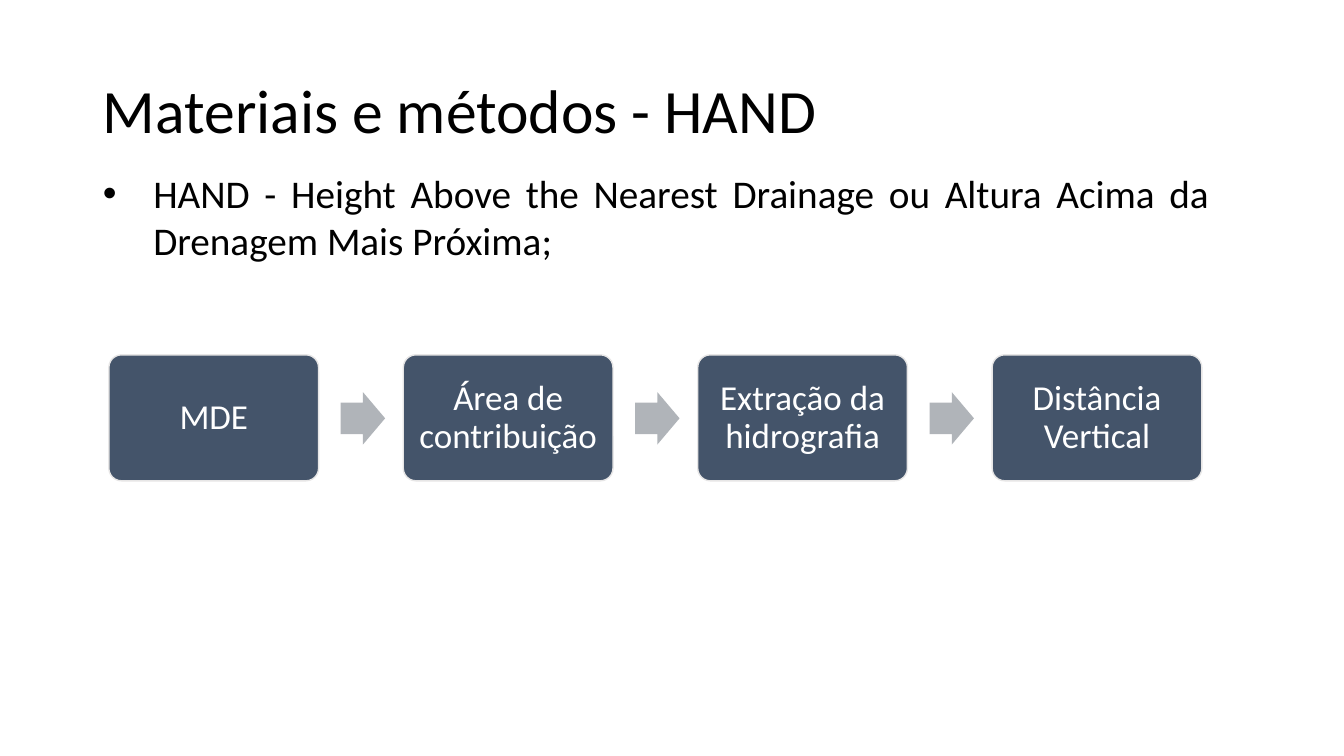
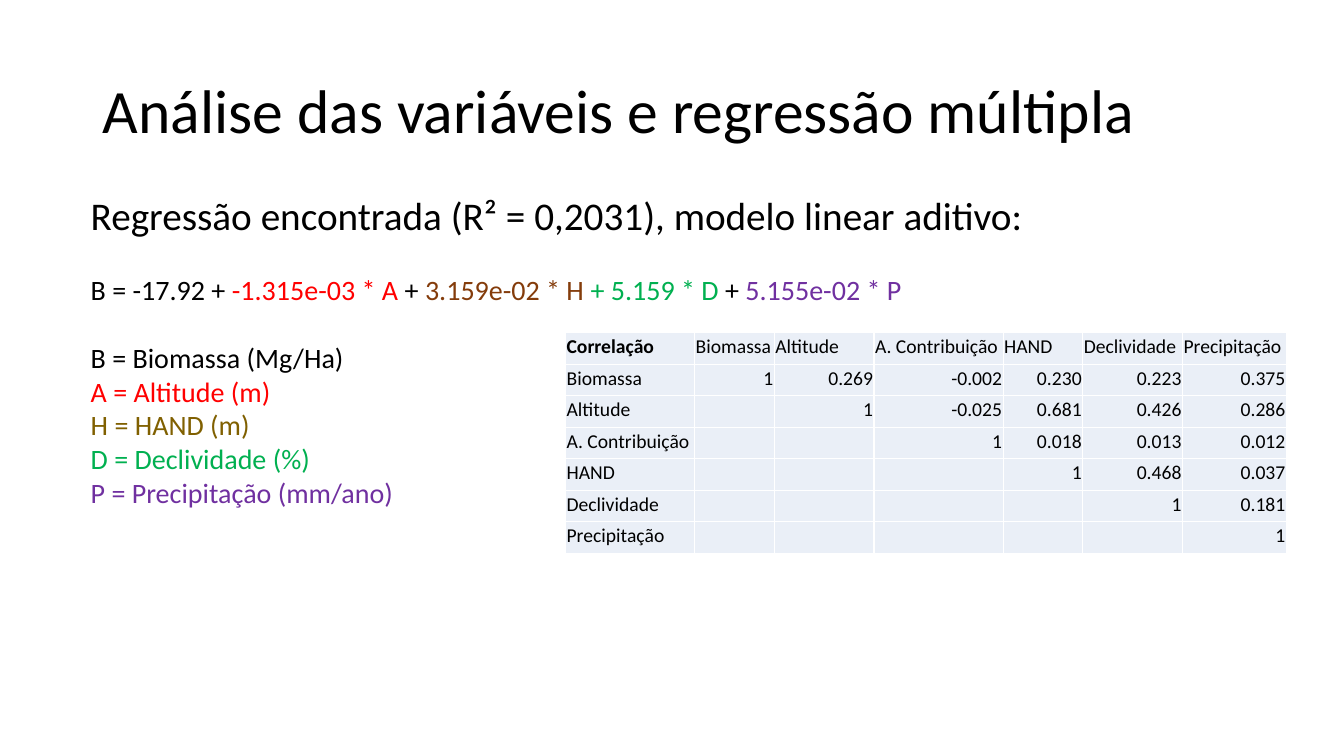
from lxml import etree
from pptx import Presentation
from pptx.dml.color import RGBColor
from pptx.enum.shapes import MSO_SHAPE as Shape
from pptx.enum.text import MSO_ANCHOR as Anchor, MSO_AUTO_SIZE as Fit, PP_ALIGN as Align
from pptx.oxml.ns import qn
from pptx.util import Inches, Pt

FONT = "Calibri"
HEX = {
    "black": "000000", "white": "FFFFFF", "navy": "44546A", "edge": "E7E6E6",
    "arrow": "B0B4B9", "cell": "EAEFF7", "red": "FF0000", "brown": "843C0B",
    "olive": "806000", "green": "00B050", "purple": "7030A0",
}

STEPS = ["MDE", "Área de contribuição", "Extração da hidrografia", "Distância Vertical"]

FORMULA = [
    ("B = -17.92 + ", "black"), ("-1.315e-03 * A ", "red"), ("+ ", "black"),
    ("3.159e-02 * H ", "brown"), ("+ 5.159 * D ", "green"), ("+ ", "black"),
    ("5.155e-02 * P", "purple"),
]
LEGEND = [
    ("B = Biomassa (Mg/Ha)", "black"), ("A = Altitude (m)", "red"),
    ("H = HAND (m)", "olive"), ("D = Declividade (%)", "green"),
    ("P = Precipitação (mm/ano)", "purple"),
]

NAMES = ["Biomassa", "Altitude", "A. Contribuição", "HAND", "Declividade", "Precipitação"]
# Upper triangle of the matrix, each row starting at its diagonal
VALUES = [
    ["1", "0.269", "-0.002", "0.230", "0.223", "0.375"],
    ["1", "-0.025", "0.681", "0.426", "0.286"],
    ["1", "0.018", "0.013", "0.012"],
    ["1", "0.468", "0.037"],
    ["1", "0.181"],
    ["1"],
]
WIDTHS = [1.28, 0.79, 0.99, 1.28, 0.79, 0.99, 1.03]


def color(name):
    return RGBColor.from_string(HEX[name])


def add_run(para, text, size, tint="black", bold=False):
    run = para.add_run()
    run.text = text
    font = run.font
    font.name, font.size, font.bold = FONT, Pt(size), bold
    font.color.rgb = color(tint)


def place(shape, left, top, width, height):
    shape.left, shape.top = Inches(left), Inches(top)
    shape.width, shape.height = Inches(width), Inches(height)


def set_list(para, mark=None, indent=0):
    """Give a paragraph a hanging bullet, or none, and plain spacing."""
    props = para._p.get_or_add_pPr()
    props.set("marL", str(Inches(indent)))
    props.set("indent", str(-Inches(indent)))
    if mark:
        etree.SubElement(props, qn("a:buFont")).set("typeface", "Arial")
        etree.SubElement(props, qn("a:buChar")).set("char", mark)
    else:
        etree.SubElement(props, qn("a:buNone"))
    para.line_spacing = 1.0
    para.space_before = para.space_after = Pt(0)


def add_slide(deck, title, *area):
    """Add a slide with its title; return it and its body frame."""
    slide = deck.slides.add_slide(deck.slide_layouts[1])
    head, body = slide.placeholders
    place(head, 0.92, 0.4, 11.5, 1.45)
    place(body, *area)
    for holder in (head, body):
        holder.text_frame.auto_size = Fit.NONE
        holder.text_frame.word_wrap = True
    head.text_frame.vertical_anchor = Anchor.MIDDLE
    para = head.text_frame.paragraphs[0]
    para.alignment, para.line_spacing = Align.LEFT, 0.9
    add_run(para, title, 44)
    return slide, body.text_frame


def add_block(slide, kind, fill, left, top, width, height):
    block = slide.shapes.add_shape(
        kind, Inches(left), Inches(top), Inches(width), Inches(height))
    block.shadow.inherit = False
    block.fill.solid()
    block.fill.fore_color.rgb = color(fill)
    block.line.fill.background()
    return block


def add_step(slide, text, left):
    box = add_block(slide, Shape.ROUNDED_RECTANGLE, "navy", left, 3.52, 2.08, 1.25)
    box.adjustments[0] = 0.1
    box.line.color.rgb = color("edge")
    box.line.width = Pt(1)
    frame = box.text_frame
    frame.word_wrap = True
    frame.vertical_anchor = Anchor.MIDDLE
    frame.margin_left = frame.margin_right = Inches(0.1)
    frame.margin_top = frame.margin_bottom = Inches(0.1)
    para = frame.paragraphs[0]
    para.alignment, para.line_spacing = Align.CENTER, 0.9
    add_run(para, text, 25, "white")


def add_flow(slide):
    for i, text in enumerate(STEPS):
        left = 1.08 + 2.92 * i
        add_step(slide, text, left)
        if i < len(STEPS) - 1:
            arrow = add_block(slide, Shape.RIGHT_ARROW, "arrow", left + 2.3, 3.89, 0.44, 0.52)
            arrow.adjustments[0] = 0.6


def set_cell(cell, text, align, bold):
    cell.margin_left = cell.margin_top = cell.margin_right = Inches(0.01)
    cell.margin_bottom = Inches(0.05)
    cell.vertical_anchor = Anchor.BOTTOM
    # White borders come before the fill
    props = cell._tc.get_or_add_tcPr()
    for side in ("lnL", "lnR", "lnT", "lnB"):
        line = etree.SubElement(props, qn("a:" + side), w=str(Pt(1)))
        paint = etree.SubElement(line, qn("a:solidFill"))
        etree.SubElement(paint, qn("a:srgbClr"), val=HEX["white"])
    cell.fill.solid()
    cell.fill.fore_color.rgb = color("cell")
    para = cell.text_frame.paragraphs[0]
    para.alignment = align
    if text:
        add_run(para, text, 14, bold=bold)
    else:
        # An empty cell keeps the row's text size
        etree.SubElement(para._p, qn("a:endParaRPr"), sz="1400")


def add_matrix(slide):
    rows = [["Correlação"] + NAMES]
    for i, (name, values) in enumerate(zip(NAMES, VALUES)):
        rows.append([name] + [""] * i + values)
    table = slide.shapes.add_table(
        len(rows), len(WIDTHS), Inches(5.61), Inches(3.3),
        Inches(sum(WIDTHS)), Inches(2.19)).table
    table.first_row = table.horz_banding = False
    for col, width in zip(table.columns, WIDTHS):
        col.width = Inches(width)
    for r, row in enumerate(rows):
        for c, text in enumerate(row):
            align = Align.RIGHT if r and c else Align.LEFT
            set_cell(table.cell(r, c), text, align, r == c == 0)


def add_model(frame):
    lines = [([("Regressão encontrada (R² = 0,2031), modelo linear aditivo:", "black")], 28, 0),
             (FORMULA, 20, 24.4)]
    lines += [([item], 20, 0 if i else 24.4) for i, item in enumerate(LEGEND)]
    for i, (runs, size, gap) in enumerate(lines):
        para = frame.add_paragraph() if i else frame.paragraphs[0]
        set_list(para)
        if gap:
            para.space_before = Pt(gap)
        for text, tint in runs:
            add_run(para, text, size, tint)


def main():
    deck = Presentation()
    deck.slide_width, deck.slide_height = Inches(13.33), Inches(7.5)

    # HAND method and its steps
    slide, frame = add_slide(deck, "Materiais e métodos - HAND", 0.92, 1.63, 11.17, 1.04)
    para = frame.paragraphs[0]
    set_list(para, "•", 0.5)
    para.alignment = Align.JUSTIFY
    add_run(para, "HAND - Height Above the Nearest Drainage ou Altura Acima da "
                  "Drenagem Mais Próxima;", 28)
    add_flow(slide)

    # Regression model and correlations
    slide, frame = add_slide(
        deck, "Análise das variáveis e regressão múltipla", 0.8, 1.85, 11.48, 3.74)
    add_model(frame)
    add_matrix(slide)

    deck.save("out.pptx")


if __name__ == "__main__":
    main()
